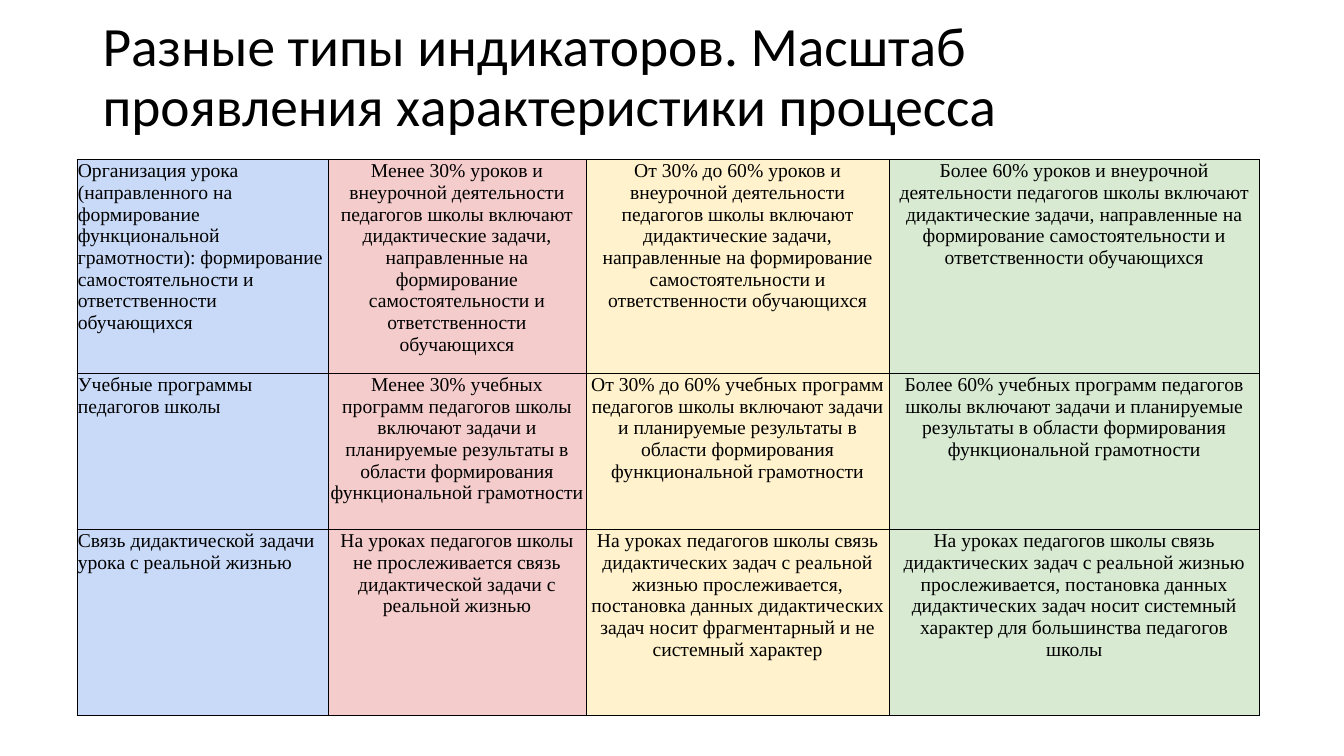
from dataclasses import dataclass

from lxml.etree import SubElement
from pptx import Presentation
from pptx.dml.color import RGBColor
from pptx.enum.text import MSO_ANCHOR, PP_ALIGN
from pptx.oxml import parse_xml
from pptx.oxml.ns import nsdecls
from pptx.util import Pt

BLACK = "000000"
BORDER_WIDTH = Pt(0.5)


@dataclass(frozen=True)
class Level:
    """One column of the table: its width, colour and alignment."""
    width: float
    fill: str
    align: PP_ALIGN


@dataclass(frozen=True)
class Indicator:
    """One row of the table: its height, name and three levels."""
    height: float
    texts: tuple[str, str, str, str]


LEVELS = [
    Level(179.4, "C9DAF8", PP_ALIGN.LEFT),
    Level(184.3, "F4CCCC", PP_ALIGN.CENTER),
    Level(216.7, "FFF2CC", PP_ALIGN.CENTER),
    Level(264.2, "D9EAD3", PP_ALIGN.CENTER),
]

LESSON_TASKS = (
    "уроков и внеурочной деятельности педагогов школы включают дидактические задачи, "
    "направленные на формирование самостоятельности и ответственности обучающихся"
)
PROGRAM_TASKS = (
    "учебных программ педагогов школы включают задачи и планируемые результаты "
    "в области формирования функциональной грамотности"
)
LIFE_LINK = (
    "На уроках педагогов школы связь дидактических задач с реальной жизнью "
    "прослеживается, постановка данных дидактических задач носит"
)

INDICATORS = [
    Indicator(152.6, (
        "Организация урока (направленного на формирование функциональной грамотности): "
        "формирование самостоятельности и ответственности обучающихся",
        f"Менее 30% {LESSON_TASKS}",
        f"От 30% до 60% {LESSON_TASKS}",
        f"Более 60% {LESSON_TASKS}",
    )),
    Indicator(111.6, (
        "Учебные программы педагогов школы",
        f"Менее 30% {PROGRAM_TASKS}",
        f"От 30% до 60% {PROGRAM_TASKS}",
        f"Более 60% {PROGRAM_TASKS}",
    )),
    Indicator(133.2, (
        "Связь дидактической задачи урока с реальной жизнью",
        "На уроках педагогов школы не прослеживается связь дидактической задачи "
        "с реальной жизнью",
        f"{LIFE_LINK} фрагментарный и не системный характер",
        f"{LIFE_LINK} системный характер для большинства педагогов школы",
    )),
]


def rgb(value: str) -> RGBColor:
    return RGBColor.from_string(value)


def style_text(paragraph, font_name: str, size: float) -> None:
    for run in paragraph.runs:
        run.font.name = font_name
        run.font.size = Pt(size)
        run.font.color.rgb = rgb(BLACK)


def add_borders(cell) -> None:
    properties = cell._tc.get_or_add_tcPr()
    # Border lines come before the fill in the cell properties
    for position, side in enumerate(("lnL", "lnR", "lnT", "lnB")):
        line = parse_xml(f'<a:{side} {nsdecls("a")} w="{BORDER_WIDTH}"><a:solidFill/></a:{side}>')
        SubElement(line[0], line[0].tag.replace("solidFill", "srgbClr"), val=BLACK)
        properties.insert(position, line)


def fill_cell(cell, text: str, level: Level) -> None:
    cell.text_frame.text = text
    cell.margin_left = cell.margin_right = cell.margin_top = Pt(0.7)
    cell.margin_bottom = Pt(0)
    cell.vertical_anchor = MSO_ANCHOR.TOP
    cell.fill.solid()
    cell.fill.fore_color.rgb = rgb(level.fill)
    paragraph = cell.text_frame.paragraphs[0]
    paragraph.alignment = level.align
    style_text(paragraph, "Times New Roman", 14)
    add_borders(cell)


def add_heading(slide) -> None:
    heading = slide.shapes.add_textbox(Pt(66.2), Pt(28.8), Pt(828), Pt(54)).text_frame
    heading.word_wrap = True
    heading.vertical_anchor = MSO_ANCHOR.MIDDLE
    heading.text = "Разные типы индикаторов. Масштаб проявления характеристики процесса"
    heading.paragraphs[0].line_spacing = 0.9
    style_text(heading.paragraphs[0], "Calibri", 39.6)


def add_indicators(slide) -> None:
    width = sum(level.width for level in LEVELS)
    height = sum(indicator.height for indicator in INDICATORS)
    indicators = slide.shapes.add_table(
        len(INDICATORS), len(LEVELS), Pt(54.9), Pt(113.9), Pt(width), Pt(height)
    ).table
    indicators.first_row = indicators.horz_banding = False
    for column, level in zip(indicators.columns, LEVELS):
        column.width = Pt(level.width)
    for row, indicator in zip(indicators.rows, INDICATORS):
        row.height = Pt(indicator.height)
        for cell, text, level in zip(row.cells, indicator.texts, LEVELS):
            fill_cell(cell, text, level)


def main() -> None:
    deck = Presentation()
    deck.slide_width, deck.slide_height = Pt(960), Pt(540)
    slide = deck.slides.add_slide(deck.slide_layouts[6])
    add_heading(slide)
    add_indicators(slide)
    deck.save("out.pptx")


if __name__ == "__main__":
    main()
